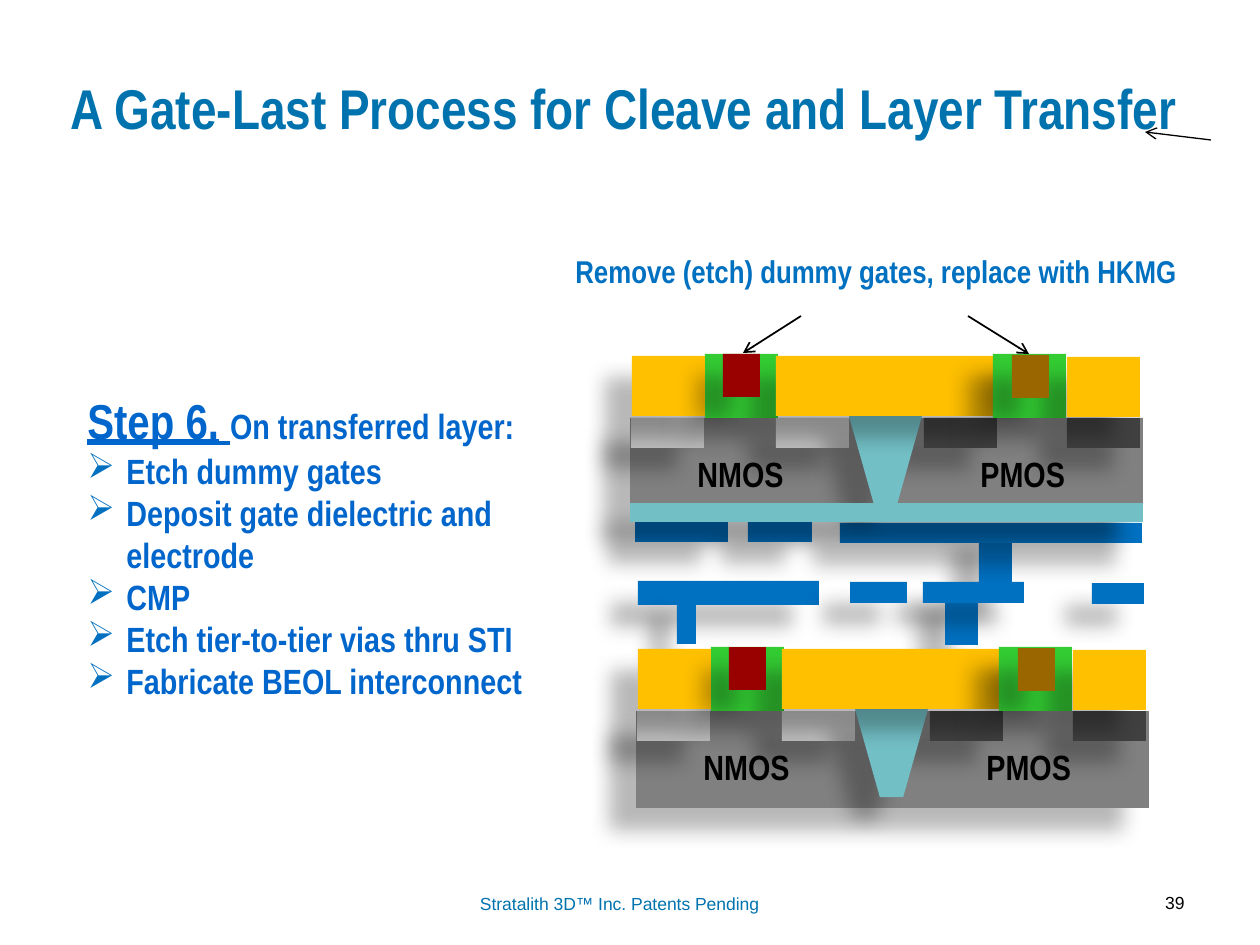
"""Build a slide on the gate-last process step for cleave and layer transfer."""
from dataclasses import dataclass
from lxml.etree import SubElement
from pptx import Presentation
from pptx.dml.color import RGBColor
from pptx.enum.shapes import MSO_CONNECTOR, MSO_SHAPE
from pptx.enum.text import PP_ALIGN
from pptx.oxml.ns import qn
from pptx.util import Emu, Pt


@dataclass(frozen=True)
class Theme:
    heading: str = "0073AE"
    accent: str = "0070C0"
    body: str = "0066CC"
    black: str = "000000"
    silicon: str = "808080"
    n_well: str = "BFBFBF"
    p_well: str = "404040"
    spacer: str = "33CC33"
    isolation: str = "72BFC5"
    oxide: str = "FFC000"
    n_gate: str = "990000"
    p_gate: str = "996600"
    narrow: str = "Arial Narrow"
    plain: str = "Arial"
    title_size: int = 32
    step_size: int = 28
    text_size: int = 20
    callout_size: int = 18
    footer_size: int = 10


THEME = Theme()
TITLE = "A Gate-Last Process for Cleave and Layer Transfer"
CALLOUT = "Remove (etch) dummy gates, replace with HKMG"
FOOTER = "Stratalith 3D™ Inc. Patents Pending"
PAGE_NUMBER = "39"
STEP = "Step 6."
STEP_INTRO = "On transferred layer:"
ACTIONS = [
    "Etch dummy gates",
    "Deposit gate dielectric and electrode",
    "CMP",
    "Etch tier-to-tier vias thru STI",
    "Fabricate BEOL interconnect",
]
INDENT = 39

ARROWS = [
    ((801, 316), (743, 353), 1),
    ((968, 316), (1029, 354), 1),
    ((1211, 140), (1145, 132), 0.75),
]
WIRING = [
    (979, 528, 33, 64), (638, 581, 181, 24), (677, 595, 19, 49),
    (840, 523, 302, 20), (635, 522, 93, 20), (748, 522, 64, 20),
    (945, 585, 33, 60), (923, 582, 101, 21), (850, 582, 57, 21),
    (1092, 583, 52, 21),
]
LOWER_TIER = (636, 711)
UPPER_TIER = (630, 418)
WELL, SPACER, GATE = (73, 30), (73, 64), (37, 43)
TIER_LAYERS = [
    (0, 0, 513, 97, THEME.silicon),
    (1, 0, *WELL, THEME.n_well),
    (146, 0, *WELL, THEME.n_well),
    (294, 0, *WELL, THEME.p_well),
    (437, 0, *WELL, THEME.p_well),
    (75, -64, *SPACER, THEME.spacer),
    (219, -2, 73, 88, THEME.isolation),
    (2, -62, 73, 60, THEME.oxide),
    (146, -62, 218, 60, THEME.oxide),
    (363, -64, *SPACER, THEME.spacer),
    (437, -61, 73, 60, THEME.oxide),
    (382, -63, *GATE, THEME.p_gate),
    (93, -64, *GATE, THEME.n_gate),
]
TRENCH = TIER_LAYERS[6]
TIER_LABELS = [("NMOS", 55), ("PMOS", 338)]
BOND_OXIDE = (630, 503, 513, 19)


def px(length):
    return Emu(round(length * 914400 / 126))


def add_run(paragraph, text, size, color, font=THEME.narrow, bold=True, underline=False):
    run = paragraph.add_run()
    run.text = text
    run.font.name = font
    run.font.size = Pt(size)
    run.font.bold = bold
    run.font.underline = underline
    run.font.color.rgb = RGBColor.from_string(color)


def add_text_frame(slide, box):
    frame = slide.shapes.add_textbox(*map(px, box)).text_frame
    frame.word_wrap = True
    return frame


def add_line_of_text(slide, box, text, size, color, align=PP_ALIGN.LEFT, **style):
    paragraph = add_text_frame(slide, box).paragraphs[0]
    paragraph.alignment = align
    add_run(paragraph, text, size, color, **style)


def add_bullet(paragraph):
    properties = paragraph._p.get_or_add_pPr()
    properties.set("marL", str(px(INDENT)))
    properties.set("indent", str(-px(INDENT)))
    color = SubElement(properties, qn("a:buClr"))
    SubElement(color, qn("a:srgbClr"), val=THEME.accent)
    SubElement(properties, qn("a:buChar"), char="➢")


def add_step(slide, box):
    frame = add_text_frame(slide, box)
    heading = frame.paragraphs[0]
    add_run(heading, STEP, THEME.step_size, THEME.body, underline=True)
    add_run(heading, " ", THEME.step_size, THEME.body, bold=False, underline=True)
    add_run(heading, STEP_INTRO, THEME.text_size, THEME.body)
    for action in ACTIONS:
        paragraph = frame.add_paragraph()
        add_bullet(paragraph)
        add_run(paragraph, action, THEME.text_size, THEME.body)


def add_layer(slide, box, color, preset=MSO_SHAPE.RECTANGLE):
    shape = slide.shapes.add_shape(preset, *map(px, box))
    shape.fill.solid()
    shape.fill.fore_color.rgb = RGBColor.from_string(color)
    shape.line.fill.background()
    shape.shadow.inherit = False
    effects = shape._element.spPr.find(qn("a:effectLst"))
    shadow = SubElement(
        effects, qn("a:outerShdw"), blurRad=str(Pt(11.8)), dist=str(Pt(19.7)),
        dir=str(141 * 60000), algn="ctr", rotWithShape="0")
    shadow_color = SubElement(shadow, qn("a:srgbClr"), val=THEME.black)
    SubElement(shadow_color, qn("a:alpha"), val="28000")
    return shape


def add_tier(slide, origin):
    left, top = origin
    for layer in TIER_LAYERS:
        x, y, width, height, color = layer
        box = (left + x, top + y, width, height)
        if layer == TRENCH:
            trench = add_layer(slide, box, color, MSO_SHAPE.TRAPEZOID)
            trench.adjustments[0] = 0.34
            trench.rotation = 180
        else:
            add_layer(slide, box, color)
    for text, x in TIER_LABELS:
        add_line_of_text(slide, (left + x, top + 28, 122, 55), text, THEME.text_size, THEME.black)


def add_arrow(slide, start, end, width):
    connector = slide.shapes.add_connector(MSO_CONNECTOR.STRAIGHT, *map(px, start + end))
    connector.line.color.rgb = RGBColor.from_string(THEME.black)
    connector.line.width = Pt(width)
    SubElement(connector.line._get_or_add_ln(), qn("a:tailEnd"), type="arrow")
    SubElement(connector._element.spPr, qn("a:effectLst"))


def main():
    presentation = Presentation()
    presentation.slide_width, presentation.slide_height = px(1260), px(945)
    slide = presentation.slides.add_slide(presentation.slide_layouts[6])
    add_line_of_text(slide, (420, 887, 399, 33), FOOTER, THEME.footer_size, THEME.heading,
                     PP_ALIGN.CENTER, font=THEME.plain, bold=False)
    add_line_of_text(slide, (1057, 886, 140, 42), PAGE_NUMBER, THEME.footer_size, THEME.black,
                     PP_ALIGN.RIGHT, font=THEME.plain, bold=False)
    add_step(slide, (75, 384, 474, 326))
    add_line_of_text(slide, (563, 246, 631, 50), CALLOUT, THEME.callout_size, THEME.accent)
    add_line_of_text(slide, (58, 67, 1144, 81), TITLE, THEME.title_size, THEME.heading)
    for box in WIRING:
        add_layer(slide, box, THEME.accent)
    add_tier(slide, LOWER_TIER)
    add_tier(slide, UPPER_TIER)
    add_layer(slide, BOND_OXIDE, THEME.isolation)
    for start, end, width in ARROWS:
        add_arrow(slide, start, end, width)
    presentation.save("out.pptx")


if __name__ == "__main__":
    main()
